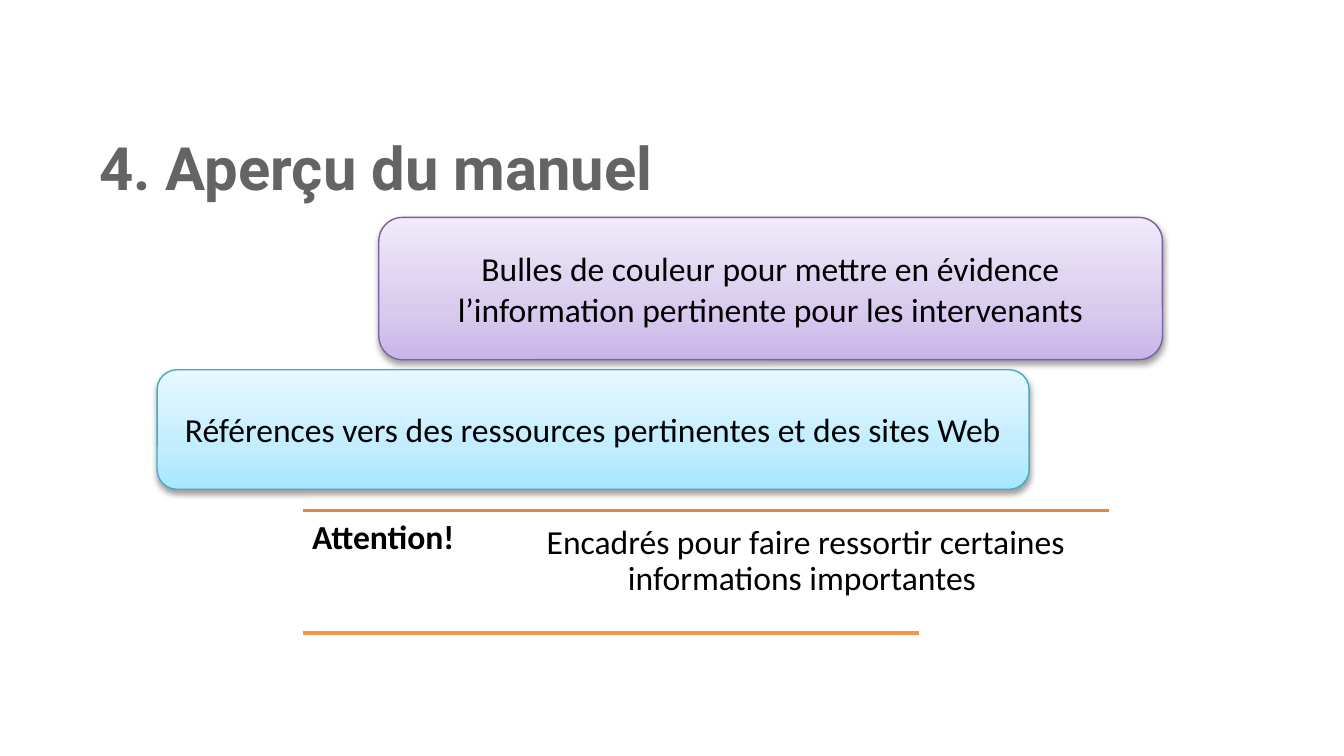
from dataclasses import dataclass

from lxml.etree import SubElement
from pptx import Presentation
from pptx.dml.color import RGBColor
from pptx.enum.shapes import MSO_CONNECTOR, MSO_SHAPE
from pptx.enum.text import MSO_ANCHOR, PP_ALIGN
from pptx.oxml.ns import qn
from pptx.util import Cm, Pt


@dataclass(frozen=True)
class Theme:
    title_font: str = "Roboto"
    body_font: str = "Calibri"
    title_size: int = 32
    body_size: int = 18
    title_color: str = "646464"
    body_color: str = "000000"
    shadow_color: str = "000000"
    purple_stops: tuple = ((0, "C9B5E8"), (35, "D8CBEE"), (100, "F0EAF9"))
    purple_line: str = "7D60A0"
    blue_stops: tuple = ((0, "A7E6FF"), (35, "C1EDFF"), (100, "E7F8FF"))
    blue_line: str = "46AAC5"
    rule_top: str = "E08840"
    rule_bottom: str = "F79646"


THEME = Theme()


def write_text(holder, text, *, font=THEME.body_font, size=THEME.body_size,
               color=THEME.body_color, bold=False, align=PP_ALIGN.LEFT,
               anchor=MSO_ANCHOR.TOP, spacing=1.0, inset=None):
    frame = holder.text_frame
    frame.word_wrap = True
    frame.vertical_anchor = anchor
    if inset is not None:
        frame.margin_left = frame.margin_right = Cm(inset)
        frame.margin_top = frame.margin_bottom = Cm(inset)
    paragraph = frame.paragraphs[0]
    paragraph.alignment = align
    paragraph.line_spacing = spacing
    run = paragraph.add_run()
    run.text = text
    run.font.name = font
    run.font.size = Pt(size)
    run.font.bold = bold
    run.font.color.rgb = RGBColor.from_string(color)


def add_label(slide, box, text, **text_format):
    label = slide.shapes.add_textbox(*map(Cm, box))
    write_text(label, text, **text_format)


def add_color(parent, color):
    return SubElement(parent, qn("a:srgbClr"), val=color)


def fill_gradient(bubble, stops):
    bubble.fill.gradient()
    bubble.fill.gradient_angle = 90
    stop_list = bubble._element.spPr.find(qn("a:gradFill")).find(qn("a:gsLst"))
    for old_stop in list(stop_list):
        stop_list.remove(old_stop)
    for percent, color in stops:
        add_color(SubElement(stop_list, qn("a:gs"), pos=str(percent * 1000)), color)


def add_soft_shadow(bubble):
    bubble.shadow.inherit = False
    effects = bubble._element.spPr.find(qn("a:effectLst"))
    shadow = SubElement(effects, qn("a:outerShdw"), blurRad=str(Pt(3.1)),
                        dist=str(Pt(1.6)), dir="5400000", rotWithShape="0")
    SubElement(add_color(shadow, THEME.shadow_color), qn("a:alpha"), val="38000")


def add_bubble(slide, box, text, stops, outline):
    bubble = slide.shapes.add_shape(MSO_SHAPE.ROUNDED_RECTANGLE, *map(Cm, box))
    fill_gradient(bubble, stops)
    bubble.line.color.rgb = RGBColor.from_string(outline)
    bubble.line.width = Pt(0.75)
    add_soft_shadow(bubble)
    write_text(bubble, text, align=PP_ALIGN.CENTER, anchor=MSO_ANCHOR.MIDDLE)


def add_rule(slide, left, right, y, color):
    rule = slide.shapes.add_connector(
        MSO_CONNECTOR.STRAIGHT, Cm(left), Cm(y), Cm(right), Cm(y))
    rule.line.color.rgb = RGBColor.from_string(color)
    rule.line.width = Pt(2)
    SubElement(rule._element.spPr, qn("a:effectLst"))


def add_notice(slide, left, top, bottom):
    right = 20.96
    add_rule(slide, left, right, top, THEME.rule_top)
    add_label(slide, (left, top, 3.58, bottom - top), "Attention!",
              bold=True, spacing=0.9, inset=0.18)
    add_label(slide, (9.5, top + 0.1, right - 9.5, 2.13),
              "Encadrés pour faire ressortir certaines informations importantes ",
              align=PP_ALIGN.CENTER, spacing=0.9, inset=0.18)
    add_rule(slide, left, 17.37, bottom, THEME.rule_bottom)


def main():
    deck = Presentation()
    deck.slide_width, deck.slide_height = Cm(25.4), Cm(14.29)
    slide = deck.slides.add_slide(deck.slide_layouts[6])

    add_bubble(slide, (7.16, 4.11, 14.81, 2.69),
               "Bulles de couleur pour mettre en évidence "
               "l’information pertinente pour les intervenants",
               THEME.purple_stops, THEME.purple_line)
    add_notice(slide, left=5.72, top=9.65, bottom=11.96)
    add_bubble(slide, (2.97, 6.99, 16.48, 2.26),
               "Références vers des ressources pertinentes et des sites Web",
               THEME.blue_stops, THEME.blue_line)
    add_label(slide, (1.63, 2.46, 20.96, 1.65), "4. Aperçu du manuel",
              font=THEME.title_font, size=THEME.title_size,
              color=THEME.title_color, bold=True,
              anchor=MSO_ANCHOR.MIDDLE, spacing=0.8)

    deck.save("out.pptx")


if __name__ == "__main__":
    main()
